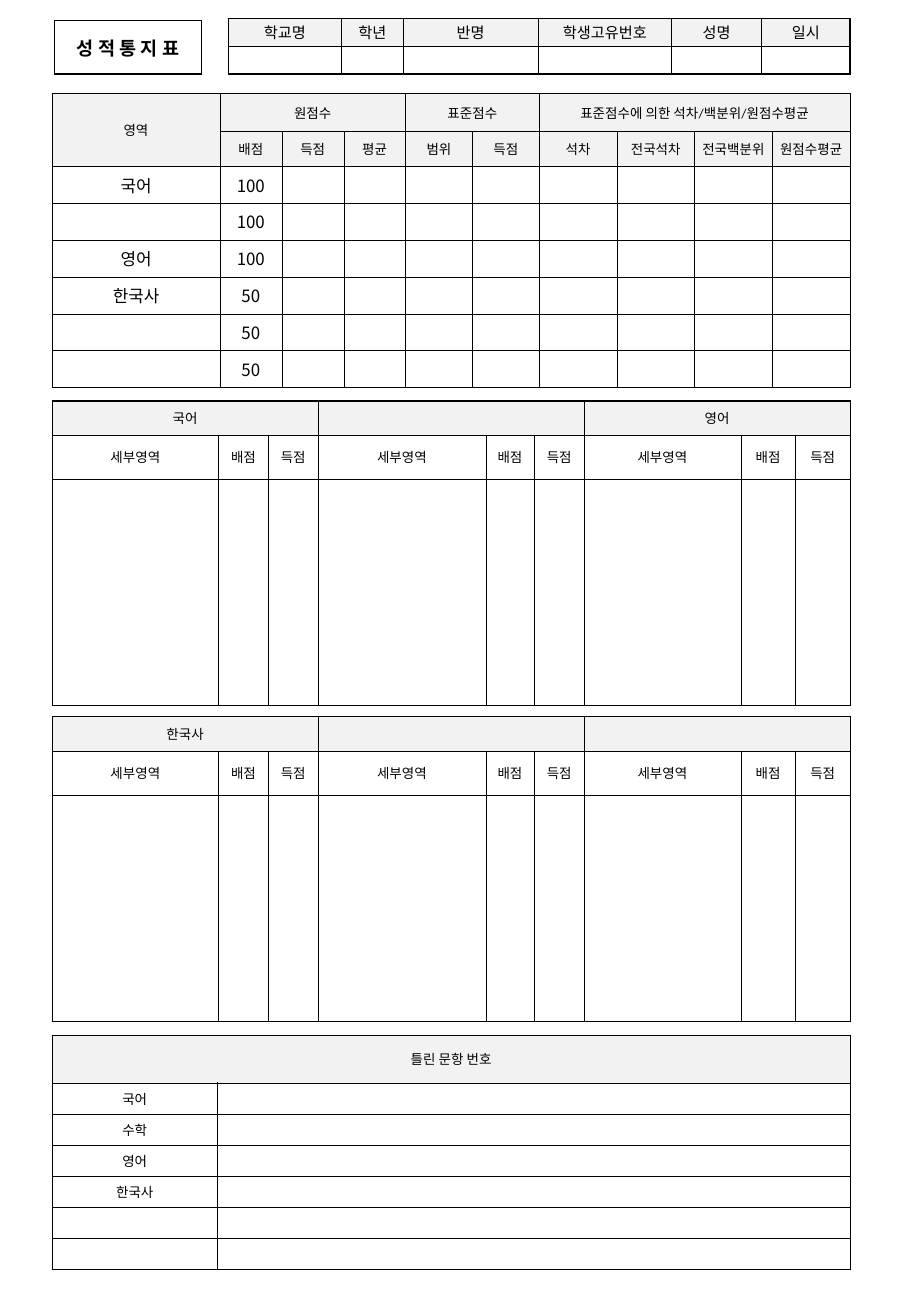
"""Builds a blank Korean school score report form on one portrait slide."""
from dataclasses import dataclass, field

from lxml.etree import SubElement
from pptx import Presentation
from pptx.dml.color import RGBColor
from pptx.enum.text import MSO_ANCHOR, PP_ALIGN
from pptx.oxml.ns import qn
from pptx.slide import Slide
from pptx.table import _Cell
from pptx.util import Inches, Pt

BLACK = "000000"
HEADER_GRAY = "F2F2F2"
LATIN_FONT = "Calibri"
KOREAN_FONT = "Noto Sans CJK KR"
PAGE_LEFT = 0.43


@dataclass(frozen=True)
class Span:
    top: int
    left: int
    bottom: int
    right: int
    merged: bool = True

    def covers(self, row: int, col: int) -> bool:
        return self.top <= row <= self.bottom and self.left <= col <= self.right


@dataclass
class Grid:
    left: float
    top: float
    cols: list[float]
    rows: list[float]
    labels: list[list[str]]
    spans: list[Span] = field(default_factory=list)
    header_rows: int = 1
    header_size: float = 8
    body_size: float = 8
    body_fonts: dict[int, str] = field(default_factory=dict)
    bold: bool = False
    margins: tuple[float, float] = (0.04, 0.02)
    rim: float = 0.75
    rule: float = 0.25


def color(value: str) -> RGBColor:
    return RGBColor.from_string(value)


def format_text(cell: _Cell, size: float, font: str, bold: bool) -> None:
    paragraph = cell.text_frame.paragraphs[0]
    paragraph.alignment = PP_ALIGN.CENTER
    for run in paragraph.runs:
        run.font.size = Pt(size)
        run.font.bold = bold
        run.font.name = font
        run.font.color.rgb = color(BLACK)
        SubElement(run._r.get_or_add_rPr(), qn("a:ea"), typeface=KOREAN_FONT)
    if not paragraph.runs:
        SubElement(paragraph._p, qn("a:endParaRPr"), sz=str(int(size * 100)))


def draw_borders(cell: _Cell, grid: Grid, row: int, col: int) -> None:
    span = next((s for s in grid.spans if s.covers(row, col)), Span(row, col, row, col))
    is_origin = span.merged and (row, col) == (span.top, span.left)
    sides = {
        "L": (col == span.left, span.left == 0),
        "R": (col == span.right, span.right == len(grid.cols) - 1),
        "T": (row == span.top, span.top == 0),
        "B": (row == span.bottom, span.bottom == len(grid.rows) - 1),
    }
    properties = cell._tc.get_or_add_tcPr()
    for side, (on_edge, on_rim) in sides.items():
        width = Pt(grid.rim if on_rim else grid.rule)
        line = SubElement(properties, qn(f"a:ln{side}"), w=str(width))
        if is_origin or on_edge:
            paint = SubElement(line, qn("a:solidFill"))
            SubElement(paint, qn("a:srgbClr"), val=BLACK)
        else:
            SubElement(line, qn("a:noFill"))


def draw_cell(cell: _Cell, grid: Grid, row: int, col: int) -> None:
    is_header = row < grid.header_rows
    labels = grid.labels[row] if row < len(grid.labels) else []
    cell.text_frame.text = labels[col] if col < len(labels) else ""
    cell.vertical_anchor = MSO_ANCHOR.MIDDLE
    cell.margin_left = cell.margin_right = Inches(grid.margins[0])
    cell.margin_top = cell.margin_bottom = Inches(grid.margins[1])
    size = grid.header_size if is_header else grid.body_size
    font = LATIN_FONT if is_header else grid.body_fonts.get(col, LATIN_FONT)
    format_text(cell, size, font, grid.bold)
    draw_borders(cell, grid, row, col)
    if is_header:
        cell.fill.solid()
        cell.fill.fore_color.rgb = color(HEADER_GRAY)
    else:
        cell.fill.background()


def draw_grid(slide: Slide, grid: Grid) -> None:
    table = slide.shapes.add_table(
        len(grid.rows), len(grid.cols), Inches(grid.left), Inches(grid.top),
        Inches(sum(grid.cols)), Inches(sum(grid.rows))).table
    table.first_row = table.horz_banding = False
    for column, width in zip(table.columns, grid.cols):
        column.width = Inches(width)
    for table_row, height in zip(table.rows, grid.rows):
        table_row.height = Inches(height)
    for span in grid.spans:
        if span.merged:
            table.cell(span.top, span.left).merge(table.cell(span.bottom, span.right))
    for row in range(len(grid.rows)):
        for col in range(len(grid.cols)):
            draw_cell(table.cell(row, col), grid, row, col)


def student_grid() -> Grid:
    return Grid(
        1.88, 0.15, [0.93, 0.51, 1.11, 1.1, 0.74, 0.73], [0.23] * 2,
        [["학교명", "학년", "반명", "학생고유번호", "성명", "일시"]],
        header_size=9, margins=(0.02, 0.02), rim=1, rule=0.5)


def title_grid() -> Grid:
    return Grid(
        0.45, 0.17, [1.21], [0.44], [["성 적 통 지 표"]], header_rows=0,
        body_size=11, bold=True, margins=(0.02, 0.02), rim=1)


def score_grid() -> Grid:
    subjects = [("국어", "100"), ("", "100"), ("영어", "100"),
                ("한국사", "50"), ("", "50"), ("", "50")]
    headers = [
        ["영역", "", "원점수", "", "", "표준점수", "", "표준점수에 의한 석차/백분위/원점수평균"],
        ["", "", "배점", "득점", "평균", "범위", "득점",
         "석차", "전국석차", "전국백분위", "원점수평균"],
    ]
    header_spans = [Span(0, 0, 1, 1), Span(0, 2, 0, 4), Span(0, 5, 0, 6), Span(0, 7, 0, 10)]
    return Grid(
        PAGE_LEFT, 0.77, [0.5, 0.88] + [0.51] * 3 + [0.55] * 2 + [0.64] * 4,
        [0.31, 0.29] + [1.82 / 6] * 6,
        headers + [[subject, "", points] for subject, points in subjects],
        header_spans + [Span(row, 0, row, 1, merged=row < 6) for row in range(2, 8)],
        header_rows=2, body_size=10, body_fonts={0: "Arial", 2: KOREAN_FONT},
        margins=(0.03, 0.03))


def detail_grid(top: float, subjects: list[str]) -> Grid:
    return Grid(
        PAGE_LEFT, top, [1.37, 0.41, 0.41, 1.38, 0.4, 0.41, 1.29, 0.45, 0.45],
        [0.28, 0.36, 1.87],
        [[label for subject in subjects for label in (subject, "", "")],
         ["세부영역", "배점", "득점"] * len(subjects)],
        [Span(0, col, 0, col + 2) for col in range(0, 9, 3)])


def wrong_answer_grid() -> Grid:
    subjects = ["국어", "수학", "영어", "한국사"]
    return Grid(
        PAGE_LEFT, 8.52, [1.36, 5.21], [0.39] + [1.54 / 6] * 6,
        [["틀린 문항 번호"]] + [[subject] for subject in subjects],
        [Span(0, 0, 0, 1)], margins=(0.07, 0.03))


def main() -> None:
    deck = Presentation()
    deck.slide_width, deck.slide_height = Inches(7.5), Inches(10.83)
    report = deck.slides.add_slide(deck.slide_layouts[6])
    for grid in (student_grid(), title_grid(), score_grid(),
                 detail_grid(3.3, ["국어", "", "영어"]), wrong_answer_grid(),
                 detail_grid(5.9, ["한국사", "", ""])):
        draw_grid(report, grid)
    deck.save("out.pptx")


if __name__ == "__main__":
    main()
